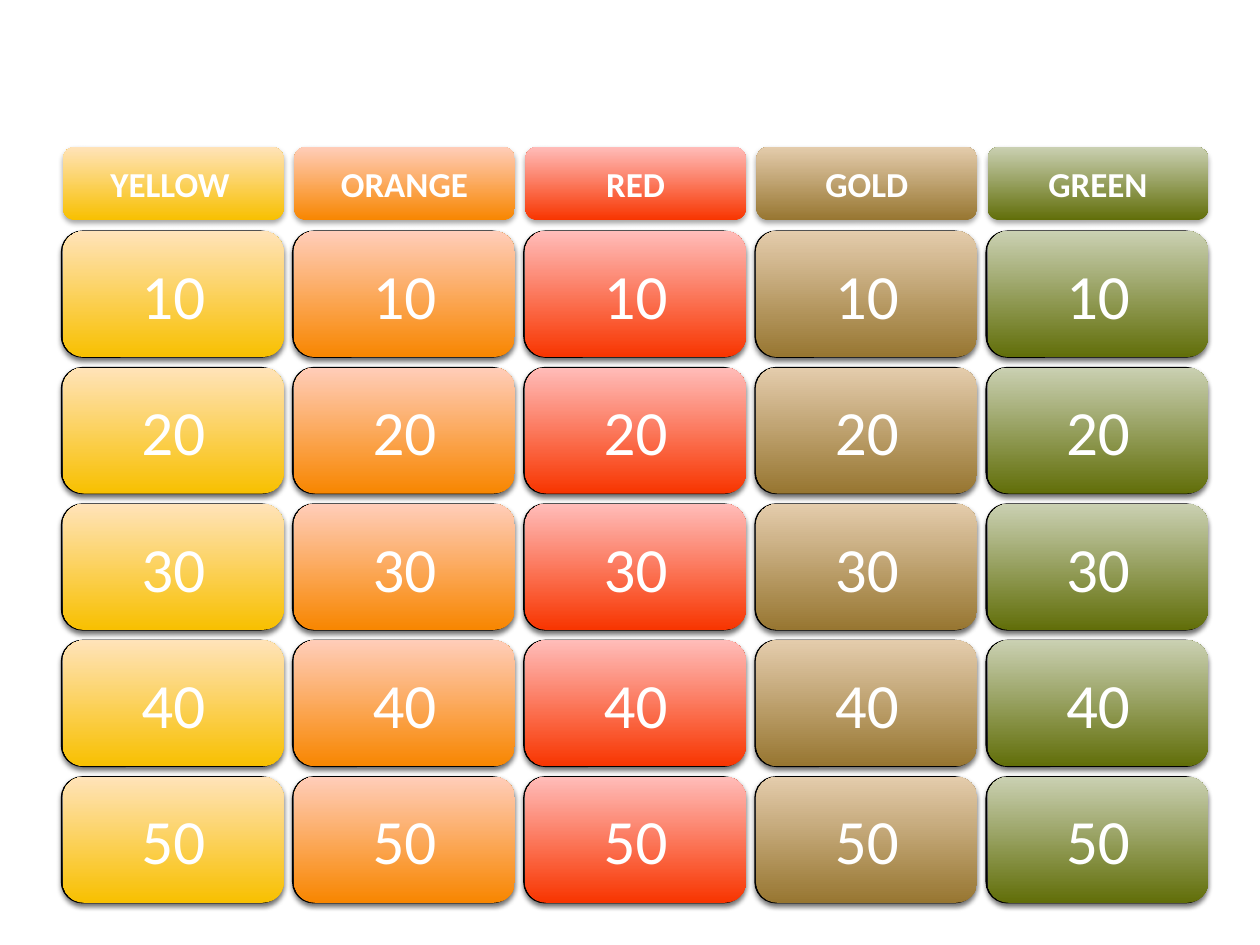
import dataclasses
import typing

import pptx
import pptx.dml.color
import pptx.enum.shapes
import pptx.enum.text
import pptx.oxml
import pptx.oxml.ns
import pptx.util

Cm = pptx.util.Cm


@dataclasses.dataclass(frozen=True)
class Theme:
    font: str = "Calibri"
    text: str = "FFFFFF"
    rim: str = "000000"
    rim_light: str = "BDBDBD"
    head_size: int = 20
    score_size: int = 36
    rim_width: float = 0.75


@dataclasses.dataclass(frozen=True)
class Topic:
    name: str
    dark: str
    light: str


@dataclasses.dataclass(frozen=True)
class Tile:
    """One rounded box; left, top and height are in centimetres."""
    text: str
    left: float
    top: float
    height: float
    dark: str
    light: str
    size: int
    bold: bool = False
    rim: bool = False


THEME = Theme()
TOPICS = [
    Topic("YELLOW\t", "F8C000", "FFE3B9"),
    Topic("ORANGE", "F88600", "FFCDB9"),
    Topic("RED", "F83500", "FFBCB9"),
    Topic("GOLD", "977631", "E4CCAC"),
    Topic("GREEN", "616E09", "CAD0B2"),
]
SCORES = [10, 20, 30, 40, 50]

LEFT, COL_STEP, WIDTH = 1.27, 4.66, 4.45
HEAD_TOP, HEAD_HEIGHT = 2.96, 1.48
TOP, ROW_STEP, HEIGHT = 4.66, 2.75, 2.54
RIM_SHIFT = 0.03

SHADOW = (
    f'<a:outerShdw {pptx.oxml.ns.nsdecls("a")} blurRad="39370" dist="22860" '
    'dir="5400000" rotWithShape="0"><a:srgbClr val="000000">'
    '<a:alpha val="35000"/></a:srgbClr></a:outerShdw>'
)


def color(code: str) -> pptx.dml.color.RGBColor:
    return pptx.dml.color.RGBColor.from_string(code)


def add_shadow(shape: typing.Any) -> None:
    shape.shadow.inherit = False
    effects = shape.element.spPr.find(pptx.oxml.ns.qn("a:effectLst"))
    effects.append(pptx.oxml.parse_xml(SHADOW))


def add_tile(shapes: typing.Any, tile: Tile) -> None:
    shape = shapes.add_shape(
        pptx.enum.shapes.MSO_SHAPE.ROUNDED_RECTANGLE,
        Cm(tile.left), Cm(tile.top), Cm(WIDTH), Cm(tile.height))
    shape.fill.gradient()
    shape.fill.gradient_angle = 90
    stops = shape.fill.gradient_stops
    for stop, place, code in zip(stops, (0, 1), (tile.dark, tile.light)):
        stop.position = place
        stop.color.rgb = color(code)
    if tile.rim:
        shape.line.color.rgb = color(THEME.rim)
        shape.line.width = pptx.util.Pt(THEME.rim_width)
    else:
        shape.line.fill.background()
    add_shadow(shape)

    frame = shape.text_frame
    frame.word_wrap = True
    frame.vertical_anchor = pptx.enum.text.MSO_ANCHOR.MIDDLE
    para = frame.paragraphs[0]
    para.alignment = pptx.enum.text.PP_ALIGN.CENTER
    run = para.add_run()
    run.text = tile.text
    run.font.name = THEME.font
    run.font.size = pptx.util.Pt(tile.size)
    run.font.bold = tile.bold
    run.font.color.rgb = color(THEME.text)


def main() -> None:
    deck = pptx.Presentation()
    deck.slide_width, deck.slide_height = Cm(25.4), Cm(19.05)
    slide = deck.slides.add_slide(deck.slide_layouts[6])
    rims = slide.shapes.add_group_shape()

    for col, topic in enumerate(TOPICS):
        left = LEFT + col * COL_STEP
        add_tile(slide.shapes, Tile(
            topic.name, left, HEAD_TOP, HEAD_HEIGHT,
            topic.dark, topic.light, THEME.head_size, bold=True))
        for row, score in enumerate(SCORES):
            tile = Tile(str(score), left, TOP + row * ROW_STEP, HEIGHT,
                        topic.dark, topic.light, THEME.score_size)
            add_tile(rims.shapes, dataclasses.replace(
                tile, left=left - RIM_SHIFT, dark=THEME.rim,
                light=THEME.rim_light, rim=True))
            add_tile(slide.shapes, tile)

    deck.save("out.pptx")


if __name__ == "__main__":
    main()
